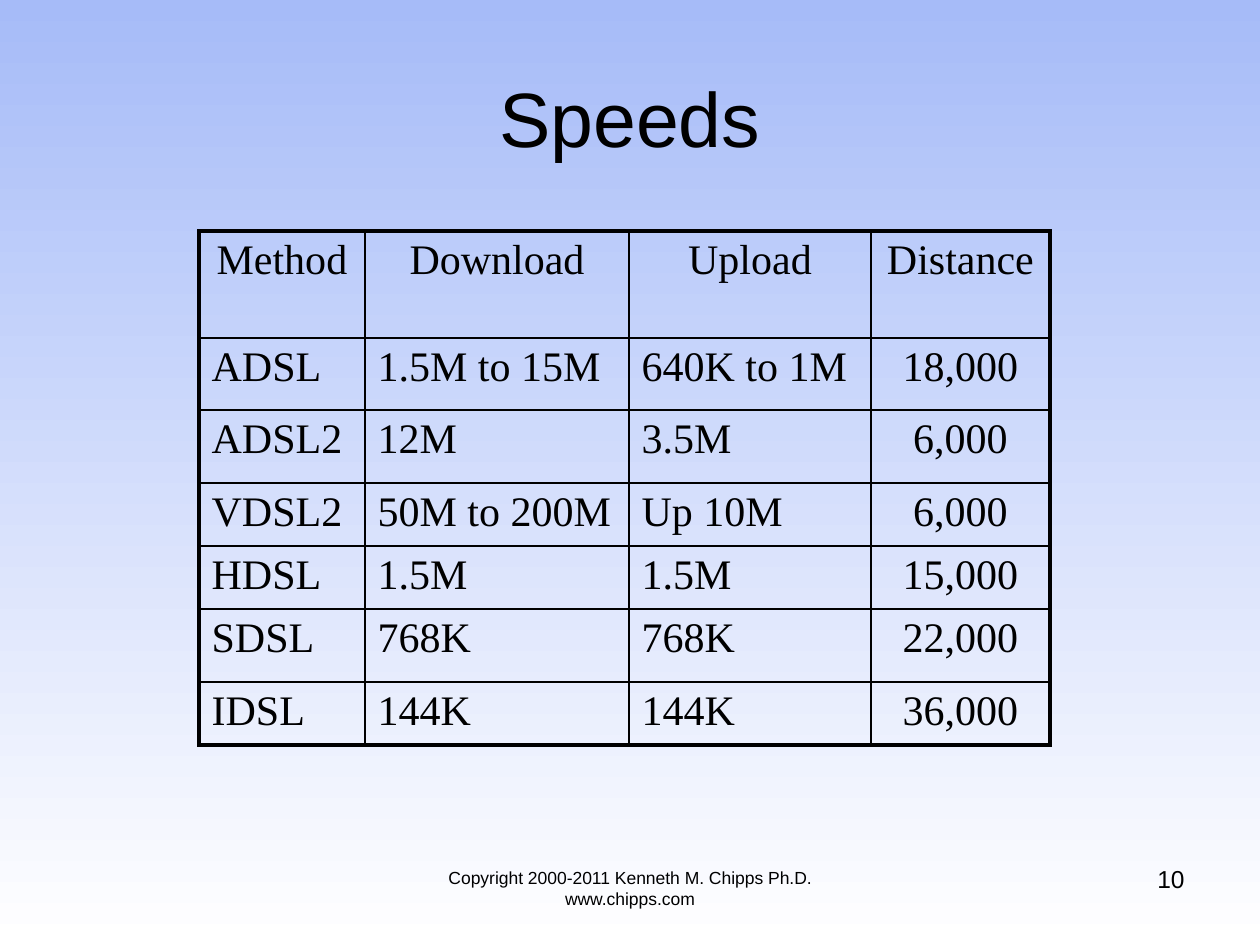
import pptx
import pptx.dml.color
import pptx.enum.text
import pptx.oxml.ns
import pptx.util
from lxml import etree

TITLE = "Speeds"
SPEEDS = [
    ("Method", "Download", "Upload", "Distance"),
    ("ADSL", "1.5M to 15M", "640K to 1M", "18,000"),
    ("ADSL2", "12M", "3.5M", "6,000"),
    ("VDSL2", "50M to 200M", "Up 10M", "6,000"),
    ("HDSL", "1.5M", "1.5M", "15,000"),
    ("SDSL", "768K", "768K", "22,000"),
    ("IDSL", "144K", "144K", "36,000"),
]
COPYRIGHT = "Copyright 2000-2011 Kenneth M. Chipps Ph.D. www.chipps.com"
PAGE = "10"

COLUMN_WIDTHS = [166, 264, 242, 179]
ROW_HEIGHTS = [107, 72, 73, 63, 63, 73, 63]

THEME = {
    "ink": "000000", "sky": "A6BBF8", "paper": "FFFFFF",
    "sans": "Arial", "serif": "Times New Roman",
    "title": 44, "table": 24, "page": 14, "copyright": 10,
    "outer": 2.25, "inner": 1,
}
ALIGN = pptx.enum.text.PP_ALIGN
ANCHOR = pptx.enum.text.MSO_ANCHOR


def px(length):
    return pptx.util.Emu(round(length * 914400 / 126))


def colour(name):
    return pptx.dml.color.RGBColor.from_string(THEME[name])


def write(frame, text, size, face="sans", align=ALIGN.LEFT, anchor=ANCHOR.TOP):
    frame.word_wrap = True
    frame.vertical_anchor = anchor
    paragraph = frame.paragraphs[0]
    paragraph.alignment = align
    run = paragraph.add_run()
    run.text = text
    run.font.name = THEME[face]
    run.font.size = pptx.util.Pt(THEME[size])
    run.font.bold = False
    run.font.color.rgb = colour("ink")


def draw_borders(cell, weights):
    properties = cell._tc.get_or_add_tcPr()
    for index, (side, weight) in enumerate(weights.items()):
        line = etree.Element(pptx.oxml.ns.qn("a:ln" + side),
                             w=str(pptx.util.Pt(THEME[weight])))
        fill = etree.SubElement(line, pptx.oxml.ns.qn("a:solidFill"))
        etree.SubElement(fill, pptx.oxml.ns.qn("a:srgbClr"), val=THEME["ink"])
        properties.insert(index, line)


def add_speeds(slide):
    table = slide.shapes.add_table(
        len(SPEEDS), len(COLUMN_WIDTHS), px(199), px(231),
        px(sum(COLUMN_WIDTHS)), px(sum(ROW_HEIGHTS))).table
    table.first_row = table.horz_banding = False
    for column, width in zip(table.columns, COLUMN_WIDTHS):
        column.width = px(width)
    for row, height in zip(table.rows, ROW_HEIGHTS):
        row.height = px(height)
    last_row, last_column = len(SPEEDS) - 1, len(COLUMN_WIDTHS) - 1
    for r, values in enumerate(SPEEDS):
        for c, value in enumerate(values):
            cell = table.cell(r, c)
            cell.fill.background()
            centred = r == 0 or c == last_column
            write(cell.text_frame, value, "table", face="serif",
                  align=ALIGN.CENTER if centred else ALIGN.LEFT)
            edges = {"L": c == 0, "R": c == last_column,
                     "T": r == 0, "B": r == last_row}
            draw_borders(cell, {side: "outer" if edge else "inner"
                                for side, edge in edges.items()})


def main():
    deck = pptx.Presentation()
    deck.slide_width, deck.slide_height = px(1260), px(945)
    slide = deck.slides.add_slide(deck.slide_layouts[5])

    sky = slide.background.fill
    sky.gradient()
    sky.gradient_angle = 270
    for stop, name in zip(sky.gradient_stops, ("sky", "paper")):
        stop.color.rgb = colour(name)

    title = slide.shapes.title
    title.left, title.top, title.width, title.height = map(px, (63, 38, 1134, 157))
    write(title.text_frame, TITLE, "title", align=ALIGN.CENTER, anchor=ANCHOR.MIDDLE)

    add_speeds(slide)

    for text, size, align, box in [
        (COPYRIGHT, "copyright", ALIGN.CENTER, (378, 861, 504, 66)),
        (PAGE, "page", ALIGN.RIGHT, (903, 858, 294, 66)),
    ]:
        footer = slide.shapes.add_textbox(*map(px, box))
        write(footer.text_frame, text, size, align=align)

    deck.save("out.pptx")


if __name__ == "__main__":
    main()
